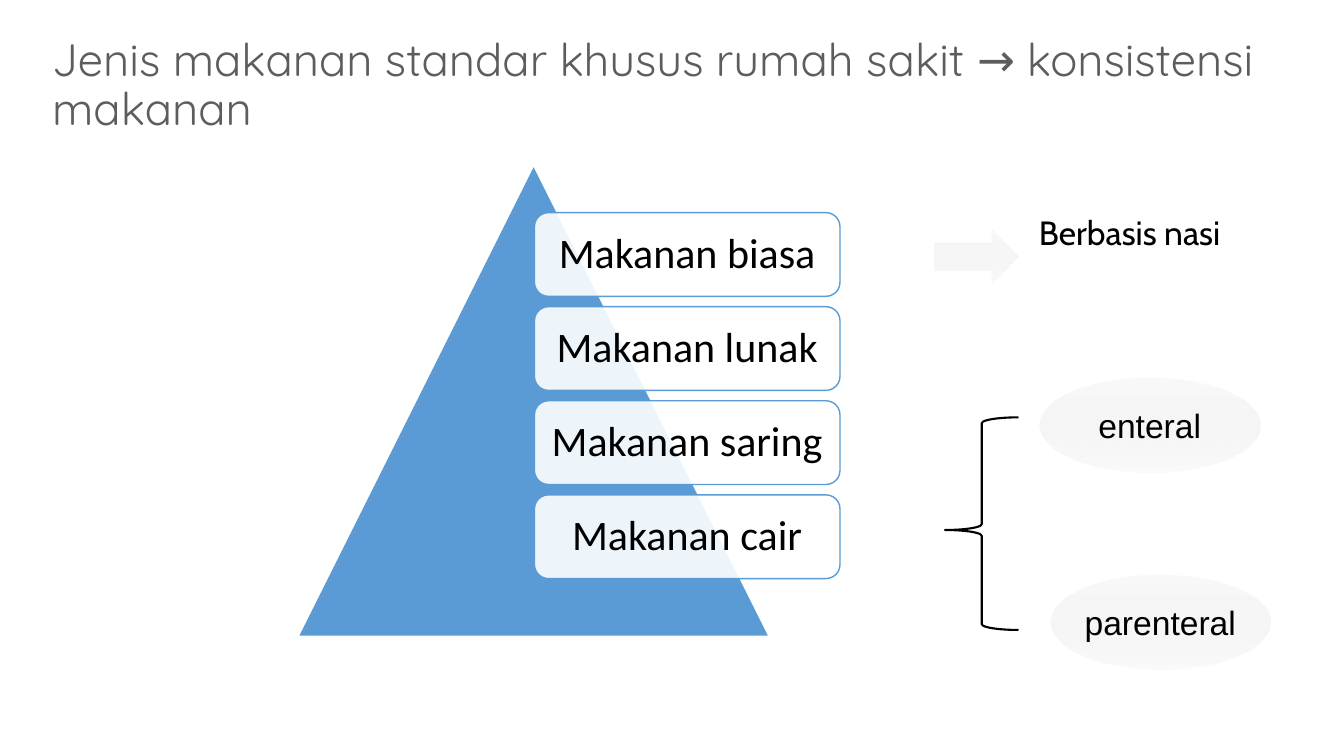
from lxml import etree
from pptx import Presentation
from pptx.dml.color import RGBColor
from pptx.enum.shapes import MSO_SHAPE
from pptx.enum.text import MSO_ANCHOR, MSO_AUTO_SIZE, PP_ALIGN
from pptx.oxml.ns import qn
from pptx.util import Inches, Pt

TRIANGLE = MSO_SHAPE.ISOSCELES_TRIANGLE
ROUNDED = MSO_SHAPE.ROUNDED_RECTANGLE
BRACE = MSO_SHAPE.LEFT_BRACE
OVAL = MSO_SHAPE.OVAL
ARROW = MSO_SHAPE.RIGHT_ARROW
LEFT, CENTER = PP_ALIGN.LEFT, PP_ALIGN.CENTER
TOP, MIDDLE = MSO_ANCHOR.TOP, MSO_ANCHOR.MIDDLE
NO_FIT = MSO_AUTO_SIZE.NONE
TITLE_ONLY = 5

COLUMNS, ROWS = 128, 72
BLACK, WHITE, BLUE, GREY = "000000", "FFFFFF", "5B9BD5", "5D5D5D"
PALE_TOP, PALE_BOTTOM = "F9F9F9", "E7E6E6"

FOODS = ["Makanan biasa", "Makanan lunak", "Makanan saring", "Makanan cair"]
FOOD_TOP, FOOD_PITCH = 20.25, 8.96
LIQUID_ROUTES = [("enteral", 99, 36), ("parenteral", 100, 54.75)]


def color(hex_string):
    return RGBColor.from_string(hex_string)


def set_alpha(color_element, percent):
    alpha = etree.SubElement(color_element, qn("a:alpha"))
    alpha.set("val", str(percent * 1000))


class FoodSlide:
    """Places styled elements by columns and rows of a 128 by 72 grid."""

    def __init__(self, presentation):
        self.column = presentation.slide_width / COLUMNS
        self.row = presentation.slide_height / ROWS
        self.slide = presentation.slides.add_slide(
            presentation.slide_layouts[TITLE_ONLY])

    def place(self, left, top, width, height):
        return (round(left * self.column), round(top * self.row),
                round(width * self.column), round(height * self.row))

    def set_text(self, shape, text, font, size, hex_string=BLACK, align=CENTER,
                 anchor=MIDDLE, wrap=True, spacing=1.0):
        frame = shape.text_frame
        frame.auto_size = NO_FIT
        frame.word_wrap = wrap
        frame.vertical_anchor = anchor
        frame.text = text
        paragraph = frame.paragraphs[0]
        paragraph.alignment = align
        paragraph.line_spacing = spacing
        paragraph.font.name = font
        paragraph.font.size = Pt(size)
        paragraph.font.color.rgb = color(hex_string)

    def title(self, text, *area):
        title = self.slide.shapes.title
        title.left, title.top, title.width, title.height = self.place(*area)
        self.set_text(title, text, "Quicksand", 32.4, GREY, LEFT, spacing=0.9)

    def label(self, text, *area):
        box = self.slide.shapes.add_textbox(*self.place(*area))
        self.set_text(box, text, "Cabin", 24, align=LEFT, anchor=TOP)

    def shape(self, kind, *area, fill=None, line=None, line_width=1):
        shape = self.slide.shapes.add_shape(kind, *self.place(*area))
        shape.shadow.inherit = False
        if fill:
            shape.fill.solid()
            shape.fill.fore_color.rgb = color(fill)
        else:
            shape.fill.background()
        if line:
            shape.line.color.rgb = color(line)
            shape.line.width = Pt(line_width)
        else:
            shape.line.fill.background()
        return shape

    def pale_shape(self, kind, *area):
        """Add a shape that fades downwards from pale grey to near clear."""
        shape = self.shape(kind, *area)
        shape.fill.gradient()
        shape.fill.gradient_angle = 270
        first, last = shape.fill.gradient_stops
        first.color.rgb = color(PALE_TOP)
        last.color.rgb = color(PALE_BOTTOM)
        set_alpha(list(shape.element.spPr.iter(qn("a:srgbClr")))[-1], 15)
        return shape

    def food(self, text, *area):
        card = self.shape(ROUNDED, *area, fill=WHITE, line=BLUE)
        set_alpha(next(card.element.spPr.iter(qn("a:srgbClr"))), 90)
        self.set_text(card, text, "Calibri", 30, spacing=0.9)

    def oval(self, text, *area):
        oval = self.pale_shape(OVAL, *area)
        self.set_text(oval, text, "Arial", 24, wrap=False)

    def brace(self, *area):
        brace = self.shape(BRACE, *area, line=BLACK, line_width=1.5)
        brace.adjustments[0] = 0.08
        brace.adjustments[1] = 0.53


def main():
    presentation = Presentation()
    presentation.slide_width = Inches(13.33)
    presentation.slide_height = Inches(7.5)

    page = FoodSlide(presentation)
    page.title("Jenis makanan standar khusus rumah sakit → konsistensi makanan",
               4, 4.5, 118.4, 7.5)
    page.shape(TRIANGLE, 28.4, 15.75, 44.85, 44.85, fill=BLUE, line=WHITE)
    for index, food in enumerate(FOODS):
        page.food(food, 50.9, FOOD_TOP + index * FOOD_PITCH, 29.1, 7.97)
    page.brace(90, 39.75, 7, 20.25)
    for route, left, top in LIQUID_ROUTES:
        page.oval(route, left, top, 21, 9)
    page.pale_shape(ARROW, 89, 21.8, 8, 5.25)
    page.label("Berbasis nasi", 98, 19.75, 21, 8.75)

    presentation.save("out.pptx")


if __name__ == "__main__":
    main()
